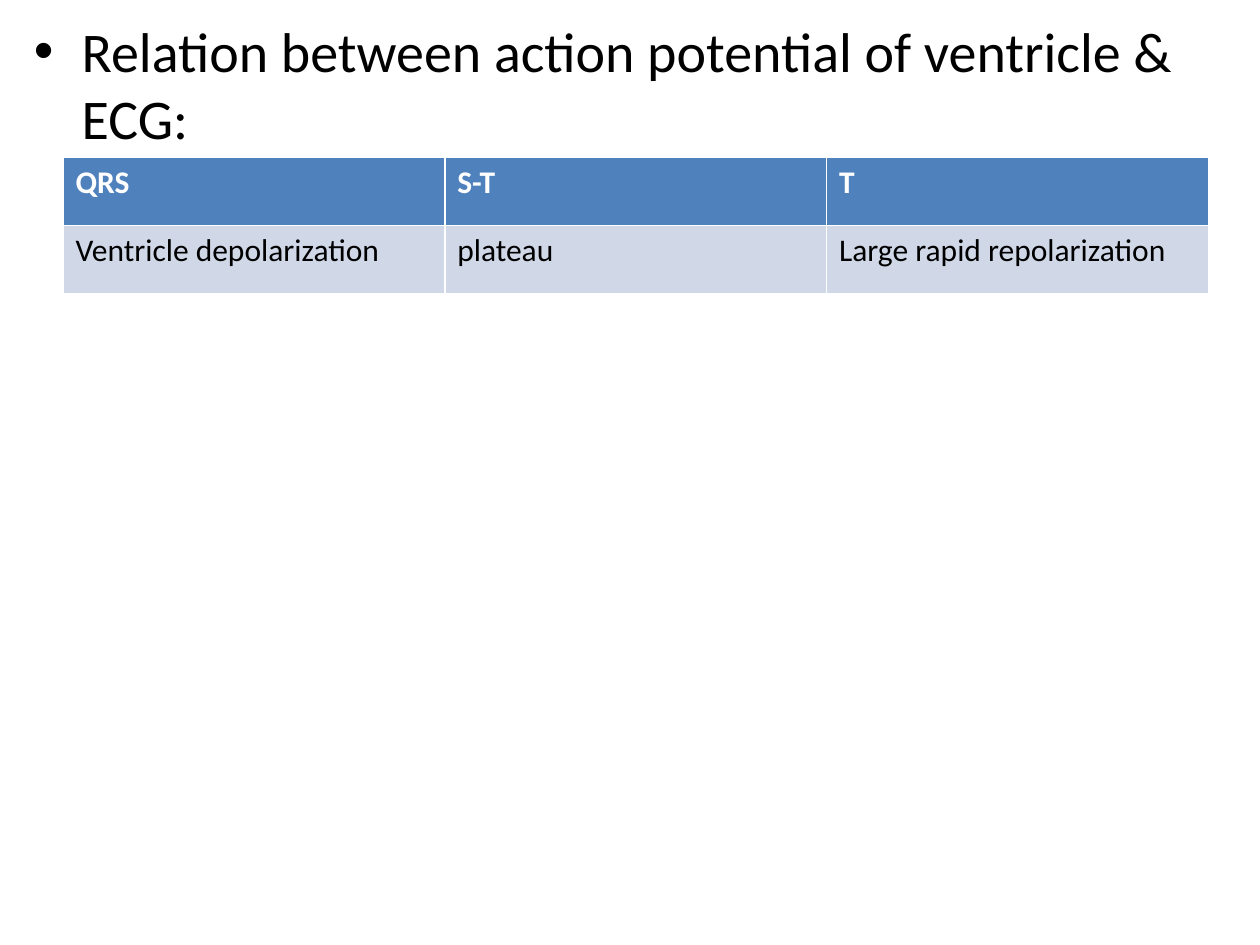
from lxml.etree import SubElement
from pptx import Presentation
from pptx.dml.color import RGBColor
from pptx.oxml.ns import qn
from pptx.util import Inches, Pt

HEADING = "Relation between action potential of ventricle & ECG:"
ROWS = [
    ("QRS", "S-T", "T"),
    ("Ventricle depolarization", "plateau", "Large rapid repolarization"),
]

BLACK = RGBColor(0x00, 0x00, 0x00)
WHITE = RGBColor(0xFF, 0xFF, 0xFF)
HEADER_BLUE = RGBColor(0x4F, 0x81, 0xBD)
BODY_BLUE = RGBColor(0xD0, 0xD8, 0xE8)
ROW_STYLES = [(HEADER_BLUE, WHITE, True), (BODY_BLUE, BLACK, False)]

FONT = "Calibri"
INDENT = Inches(0.38)
COLUMN_WIDTH = Inches(3.03)
ROW_HEIGHT = Inches(0.54)


def style_font(paragraph, size, color, bold=False):
    font = paragraph.font
    font.name, font.size, font.bold = FONT, Pt(size), bold
    font.color.rgb = color


def add_bullet(paragraph):
    properties = paragraph._p.get_or_add_pPr()
    properties.set("marL", str(INDENT))
    properties.set("indent", str(-INDENT))
    bullet_font = SubElement(properties, qn("a:buFont"))
    bullet_font.set("typeface", "Arial")
    SubElement(properties, qn("a:buChar")).set("char", "•")


def add_heading(slide):
    box = slide.shapes.add_textbox(Inches(0.17), Inches(0.08), Inches(9.67), Inches(7.25))
    box.text_frame.word_wrap = True
    paragraph = box.text_frame.paragraphs[0]
    paragraph.text = HEADING
    add_bullet(paragraph)
    style_font(paragraph, 32, BLACK)


def add_wave_table(slide):
    """Add the ECG waves with their ventricular phases; the table style draws the white borders."""
    column_count = len(ROWS[0])
    table = slide.shapes.add_table(
        len(ROWS), column_count, Inches(0.5), Inches(1.25),
        COLUMN_WIDTH * column_count, ROW_HEIGHT * len(ROWS),
    ).table
    for row, texts, (fill, color, bold) in zip(table.rows, ROWS, ROW_STYLES):
        for cell, text in zip(row.cells, texts):
            cell.text = text
            cell.fill.solid()
            cell.fill.fore_color.rgb = fill
            style_font(cell.text_frame.paragraphs[0], 18, color, bold)


def main():
    presentation = Presentation()
    presentation.slide_width, presentation.slide_height = Inches(10), Inches(7.5)
    slide = presentation.slides.add_slide(presentation.slide_layouts[6])
    add_heading(slide)
    add_wave_table(slide)
    presentation.save("out.pptx")


if __name__ == "__main__":
    main()
